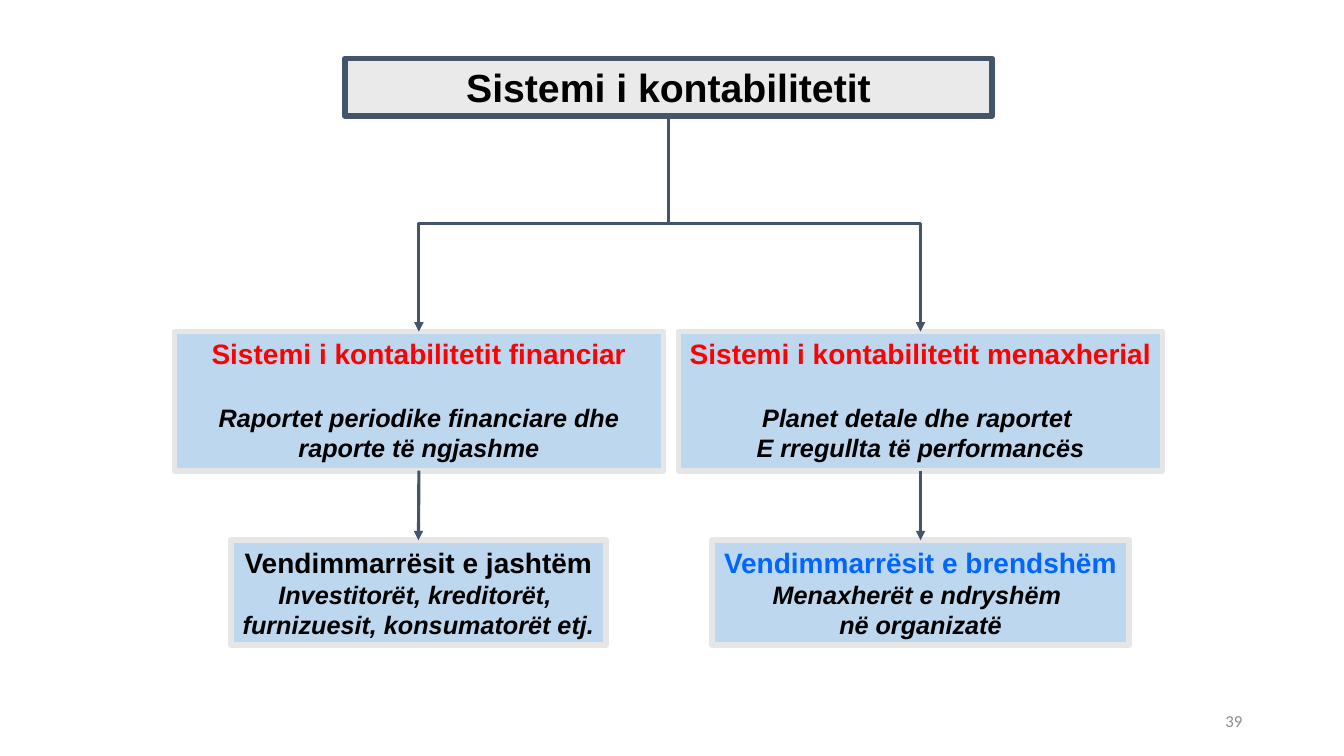
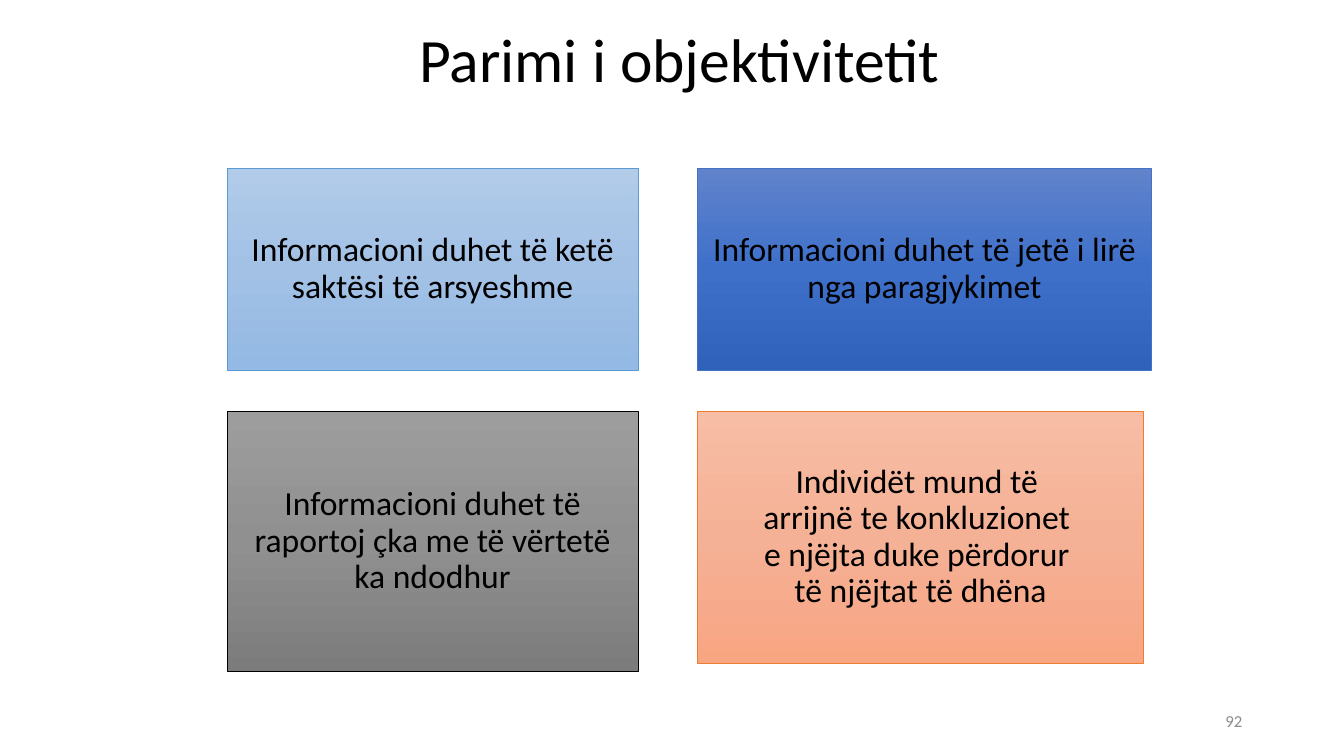
from copy import deepcopy

from lxml.etree import SubElement
from pptx import Presentation
from pptx.dml.color import RGBColor
from pptx.enum.shapes import MSO_CONNECTOR as CONN, MSO_SHAPE as SHAPE
from pptx.enum.text import MSO_ANCHOR as ANCHOR, PP_ALIGN as ALIGN
from pptx.oxml.ns import qn
from pptx.util import Emu, Pt

PX = 9144  # 100 px to the inch
TOP, BOTTOM = 0, 2  # connection sites of a rectangle

BLACK = RGBColor(0x00, 0x00, 0x00)
RED = RGBColor(0xFF, 0x00, 0x00)
BLUE = RGBColor(0x00, 0x66, 0xFF)
SLATE = RGBColor(0x44, 0x54, 0x6A)
SILVER = RGBColor(0xEA, 0xEA, 0xEA)
BORDER = RGBColor(0xE7, 0xE6, 0xE6)
PALE_BLUE = RGBColor(0xBD, 0xD7, 0xEE)
PAGE_GREY = RGBColor(0x8C, 0x8C, 0x8C)

ROOT = ("Sistemi i kontabilitetit", (342, 58, 642, 57))
# heading, heading colour, detail lines, gap before details (pt), box
BRANCHES = [
    [("Sistemi i kontabilitetit financiar", RED,
      ["Raportet periodike financiare dhe raporte të ngjashme"],
      23, (173, 329, 485, 138)),
     ("Vendimmarrësit e jashtëm", BLACK,
      ["Investitorët, kreditorët, ", "furnizuesit, konsumatorët etj."],
      0, (229, 536, 372, 104))],
    [("Sistemi i kontabilitetit menaxherial", RED,
      ["Planet detale dhe raportet ", "E rregullta të performancës"],
      23, (673, 329, 480, 138)),
     ("Vendimmarrësit e brendshëm", BLUE,
      ["Menaxherët e ndryshëm ", "në organizatë"],
      0, (706, 536, 414, 104))],
]

TITLE = "Parimi i objektivitetit"
# lines, box, gradient from top to bottom, border
PRINCIPLES = [
    (["Informacioni duhet të ketë saktësi të arsyeshme"],
     (225, 167, 408, 200), ("B1CBE9", "A3C1E5", "93B9E4"), "5B9BD5"),
    (["Informacioni duhet të jetë i lirë nga paragjykimet"],
     (692, 167, 450, 200), ("6183CB", "3E70CA", "3062BB"), "4472C4"),
    (["Informacioni duhet të raportoj çka me të vërtetë ka ndodhur"],
     (225, 408, 408, 258), ("9D9D9D", "909090", "7C7C7C"), "000000"),
    (["Individët mund të ", "arrijnë te konkluzionet ",
      "e njëjta duke përdorur ", "të njëjtat të dhëna"],
     (692, 408, 442, 250), ("F7BDA5", "F5B196", "F8A582"), "ED7D31"),
]


def px(*values):
    return [Emu(v * PX) for v in values]


def write(shape, lines, size, font, color=BLACK, align=ALIGN.CENTER,
          anchor=ANCHOR.MIDDLE, spacing=None, bold=False):
    tf = shape.text_frame
    tf.word_wrap = True
    tf.vertical_anchor = anchor
    tf.text = "\n".join(lines)
    for p in tf.paragraphs:
        p.alignment = align
        p.line_spacing = spacing
        f = p.runs[0].font
        f.size, f.name, f.bold = Pt(size), font, bold
        f.color.rgb = color


def add_box(s, box, border, weight, fill=None):
    sp = s.shapes.add_shape(SHAPE.RECTANGLE, *px(*box))
    sp.shadow.inherit = False
    if fill is not None:
        sp.fill.solid()
        sp.fill.fore_color.rgb = fill
    sp.line.color.rgb = border
    sp.line.width = Pt(weight)
    return sp


def add_label(s, box, text, size, **style):
    write(s.shapes.add_textbox(*px(*box)), [text], size, "Calibri", **style)


def add_page_number(s, number):
    add_label(s, (942, 695, 300, 40), number, 12, color=PAGE_GREY, align=ALIGN.RIGHT)


def set_gradient(shape, colors):
    """Fill with evenly spaced colours running downwards."""
    fill = shape.fill
    fill.gradient()
    fill.gradient_angle = 270
    stops = shape._element.spPr.find(".//" + qn("a:gsLst"))
    while len(stops) < len(colors):
        stops.append(deepcopy(stops[0]))
    for i, (stop, color) in enumerate(zip(fill.gradient_stops, colors)):
        stop.position = i / (len(colors) - 1)
        stop.color.rgb = RGBColor.from_string(color)


def add_arrow(s, upper, lower, kind):
    cxn = s.shapes.add_connector(kind, 0, 0, 0, 0)
    cxn.begin_connect(upper, BOTTOM)
    cxn.end_connect(lower, TOP)
    cxn.line.color.rgb = SLATE
    cxn.line.width = Pt(2.25)
    sp_pr = cxn._element.spPr
    SubElement(sp_pr.find(qn("a:ln")), qn("a:tailEnd")).set("type", "triangle")
    SubElement(sp_pr, qn("a:effectLst"))
    return cxn


def turn_downwards(cxn):
    """Rotate an elbow so that it leaves and arrives vertically."""
    x1, y1, x2, y2 = cxn.begin_x, cxn.begin_y, cxn.end_x, cxn.end_y
    dx, dy = abs(x2 - x1), y2 - y1
    cxn.left, cxn.top = Emu((x1 + x2 - dy) // 2), Emu((y1 + y2 - dx) // 2)
    cxn.width, cxn.height = Emu(dy), Emu(dx)
    to_right = x2 > x1
    xfrm = cxn._element.spPr.find(qn("a:xfrm"))
    xfrm.set("rot", str((270 if to_right else 90) * 60000))
    xfrm.set("flipH", "1" if to_right else "0")
    xfrm.set("flipV", "0")


def add_topic(s, heading, color, details, gap, box):
    sp = add_box(s, box, BORDER, 4, PALE_BLUE)
    write(sp, [heading, *details], 18, "Arial", anchor=ANCHOR.TOP, bold=True)
    first, *rest = sp.text_frame.paragraphs
    first.runs[0].font.size = Pt(20)
    first.runs[0].font.color.rgb = color
    for p in rest:
        p.runs[0].font.italic = True
    rest[0].space_before = Pt(gap)
    return sp


def build_system(s):
    text, box = ROOT
    root = add_box(s, box, SLATE, 4, SILVER)
    write(root, [text], 28, "Arial", bold=True)
    for branch in BRANCHES:
        system, users = [add_topic(s, *topic) for topic in branch]
        turn_downwards(add_arrow(s, root, system, CONN.ELBOW))
        add_arrow(s, system, users, CONN.STRAIGHT)
    add_page_number(s, "39")


def build_principle(s):
    for lines, box, colors, border in PRINCIPLES:
        sp = add_box(s, box, RGBColor.from_string(border), 0.5)
        set_gradient(sp, colors)
        write(sp, lines, 24, "Calibri", spacing=0.9)
    add_label(s, (406, 24, 548, 77), TITLE, 44, align=ALIGN.LEFT, spacing=0.9)
    add_page_number(s, "92")


def main():
    prs = Presentation()
    prs.slide_width, prs.slide_height = px(1333, 750)
    for build in (build_system, build_principle):
        build(prs.slides.add_slide(prs.slide_layouts[6]))
    prs.save("out.pptx")


if __name__ == "__main__":
    main()
